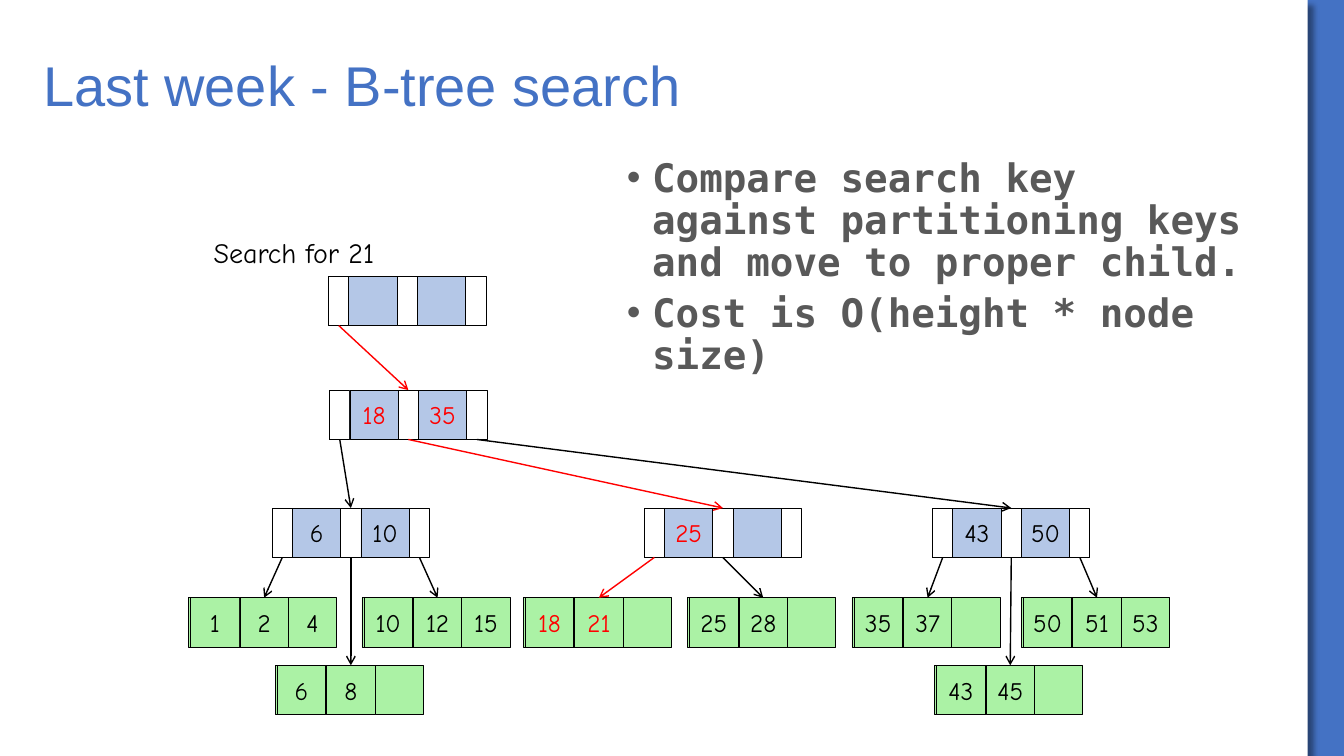
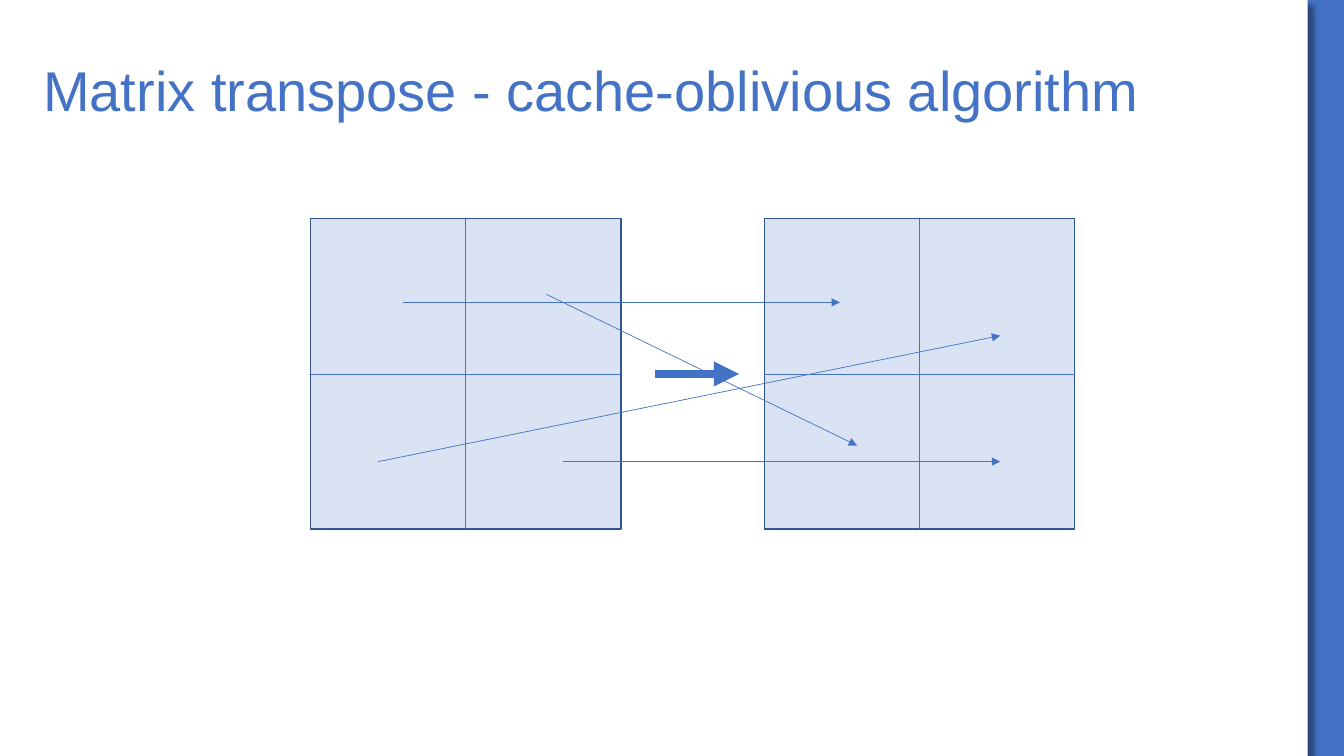
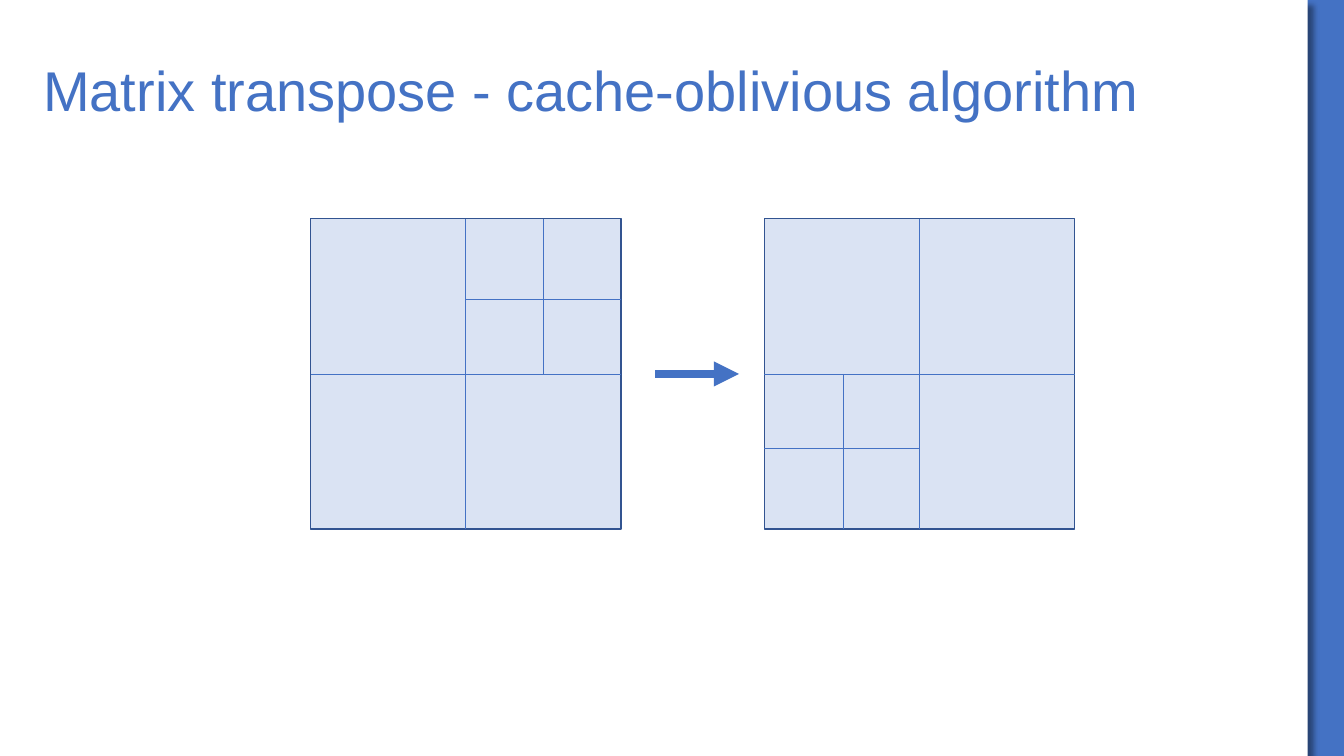
from dataclasses import dataclass

from lxml import etree
from pptx import Presentation
from pptx.dml.color import RGBColor
from pptx.enum.shapes import MSO_CONNECTOR, MSO_SHAPE
from pptx.enum.text import MSO_ANCHOR, MSO_AUTO_SIZE, PP_ALIGN
from pptx.oxml.ns import qn
from pptx.shapes.autoshape import Shape
from pptx.shapes.connector import Connector
from pptx.slide import Slide
from pptx.text.text import TextFrame, _Paragraph
from pptx.util import Pt

PX = 9144
SLIDE_WIDTH, SLIDE_HEIGHT, PANEL_WIDTH = 1333, 750, 1297
RECTANGLE = MSO_SHAPE.RECTANGLE
STRAIGHT = MSO_CONNECTOR.STRAIGHT
MIDDLE = MSO_ANCHOR.MIDDLE
CENTER = PP_ALIGN.CENTER
FIT_SHAPE = MSO_AUTO_SIZE.SHAPE_TO_FIT_TEXT
TOP, LEFT, BOTTOM, RIGHT = range(4)

COLOURS = {
    "accent": "4472C4",
    "panel": "FFFFFF",
    "body": "595959",
    "ink": "000000",
    "path": "FF0000",
    "key": "B4C7E7",
    "leaf": "ABF2A5",
    "matrix": "DAE3F3",
    "matrix_edge": "325491",
}
TITLE_FONT, BODY_FONT, TREE_FONT = "Arial", "DejaVu Sans Mono", "Comic Neue"


@dataclass(frozen=True)
class Slot:
    offset: int
    width: int
    fill: str


@dataclass(frozen=True)
class NodeKind:
    width: int
    fill: str
    slots: tuple[Slot, ...]
    key_slots: tuple[int, ...]
    pointer_slots: tuple[int, ...]
    entry_slot: int


@dataclass(frozen=True)
class Node:
    kind: NodeKind
    left: int
    top: int
    keys: tuple[str, ...] = ()
    on_path: bool = False
    children: tuple["Node", ...] = ()


@dataclass(frozen=True)
class Split:
    left: int
    top: int
    size: int
    across: int
    down: int


@dataclass(frozen=True)
class Move:
    start: tuple[int, int]
    end: tuple[int, int]


NODE_HEIGHT = 49
INNER = NodeKind(
    155, "key",
    (Slot(0, 20, "panel"), Slot(20, 48, "key"), Slot(68, 20, "panel"),
     Slot(88, 48, "key"), Slot(136, 20, "panel")),
    (1, 3), (0, 2, 4), 2,
)
LEAF = NodeKind(
    145, "leaf", tuple(Slot(offset, 48, "leaf") for offset in (2, 51, 99)),
    (0, 1, 2), (), 1,
)
INNER_TOP, LEAF_TOP, LOW_LEAF_TOP = 504, 593, 660

TREE = Node(INNER, 326, 274, on_path=True, children=(
    Node(INNER, 327, 387, ("18", "35"), True, (
        Node(INNER, 270, INNER_TOP, ("6", "10"), children=(
            Node(LEAF, 187, LEAF_TOP, ("1", "2", "4")),
            Node(LEAF, 273, LOW_LEAF_TOP, ("6", "8")),
            Node(LEAF, 359, LEAF_TOP, ("10", "12", "15")),
        )),
        Node(INNER, 639, INNER_TOP, ("25",), True, (
            Node(LEAF, 519, LEAF_TOP, ("18", "21"), True),
            Node(LEAF, 682, LEAF_TOP, ("25", "28")),
        )),
        Node(INNER, 925, INNER_TOP, ("43", "50"), children=(
            Node(LEAF, 845, LEAF_TOP, ("35", "37")),
            Node(LEAF, 927, LOW_LEAF_TOP, ("43", "45")),
            Node(LEAF, 1013, LEAF_TOP, ("50", "51", "53")),
        )),
    )),
))

MATRIX_TOP, MATRIX_SIZE = 217, 308
SOURCE_LEFT, RESULT_LEFT = 308, 758
HALF = MATRIX_SIZE // 2
SOURCE_QUARTER = Split(HALF, 0, HALF, 77, 80)
RESULT_QUARTER = Split(0, HALF, HALF, 78, 74)
QUADRANT_MOVES = (
    Move((400, 300), (833, 300)),
    Move((558, 458), (992, 458)),
    Move((375, 458), (992, 333)),
    Move((542, 292), (850, 442)),
)


def rgb(colour: str) -> RGBColor:
    return RGBColor.from_string(COLOURS[colour])


def add_run(paragraph: _Paragraph, text: str, font: str, size: int,
            colour: str, bold: bool = False) -> None:
    run = paragraph.add_run()
    run.text = text
    run.font.name = font
    run.font.size = Pt(size)
    run.font.bold = bold
    run.font.color.rgb = rgb(colour)


def add_box(shapes, left: int, top: int, width: int, height: int, fill: str,
            edge: str | None = None, edge_width: float = 0.5) -> Shape:
    box = shapes.add_shape(RECTANGLE, left * PX, top * PX, width * PX, height * PX)
    box.shadow.inherit = False
    box.fill.solid()
    box.fill.fore_color.rgb = rgb(fill)
    if edge:
        box.line.color.rgb = rgb(edge)
        box.line.width = Pt(edge_width)
    else:
        box.line.fill.background()
    return box


def add_text_frame(slide: Slide, left: int, top: int, width: int, height: int) -> TextFrame:
    frame = slide.shapes.add_textbox(left * PX, top * PX, width * PX, height * PX).text_frame
    frame.word_wrap = True
    return frame


def add_line(slide: Slide, start: tuple[int, int], end: tuple[int, int], colour: str,
             width: float, head: str | None = None) -> Connector:
    line = slide.shapes.add_connector(STRAIGHT, *(value * PX for value in start + end))
    line.line.color.rgb = rgb(colour)
    line.line.width = Pt(width)
    properties = line.element.spPr
    if head:
        etree.SubElement(properties.find(qn("a:ln")), qn("a:tailEnd"), type=head)
    etree.SubElement(properties, qn("a:effectLst"))
    return line


def join(line: Connector, origin: Shape, origin_side: int,
         target: Shape, target_side: int) -> None:
    line.begin_connect(origin, origin_side)
    line.end_connect(target, target_side)


def add_titled_slide(deck, title: str, title_top: int, title_height: int) -> Slide:
    slide = deck.slides.add_slide(deck.slide_layouts[6])
    slide.background.fill.solid()
    slide.background.fill.fore_color.rgb = rgb("accent")
    panel = add_box(slide.shapes, 0, 0, PANEL_WIDTH, SLIDE_HEIGHT, "panel")
    shadow = etree.SubElement(
        panel.element.spPr.find(qn("a:effectLst")), qn("a:outerShdw"),
        blurRad=str(Pt(4)), dist=str(Pt(6)), dir="2700000", algn="tl", rotWithShape="0")
    tint = etree.SubElement(shadow, qn("a:srgbClr"), val=COLOURS["ink"])
    etree.SubElement(tint, qn("a:alpha"), val="40000")
    frame = add_text_frame(slide, 33, title_top, 1233, title_height)
    frame.vertical_anchor = MIDDLE
    heading = frame.paragraphs[0]
    heading.line_spacing = 0.9
    add_run(heading, title, TITLE_FONT, 40, "accent")
    return slide


def add_bullets(slide: Slide, points: tuple[str, ...]) -> None:
    frame = add_text_frame(slide, 612, 152, 646, 256)
    for index, point in enumerate(points):
        paragraph = frame.add_paragraph() if index else frame.paragraphs[0]
        paragraph.line_spacing = 0.9
        paragraph.space_before = Pt(6)
        add_run(paragraph, point, BODY_FONT, 28, "body", True)
        properties = paragraph._p.get_or_add_pPr()
        properties.set("marL", str(25 * PX))
        properties.set("indent", str(-25 * PX))
        etree.SubElement(properties, qn("a:buFont"), typeface=TITLE_FONT)
        etree.SubElement(properties, qn("a:buChar"), char="•")


def add_key(slot: Shape, key: str, colour: str) -> None:
    frame = slot.text_frame
    frame.margin_left = frame.margin_right = 0
    frame.vertical_anchor = MIDDLE
    frame.paragraphs[0].alignment = CENTER
    add_run(frame.paragraphs[0], key, TREE_FONT, 18, colour)


def add_tree(slide: Slide, node: Node) -> Shape:
    kind = node.kind
    group = slide.shapes.add_group_shape()
    add_box(group.shapes, node.left, node.top, kind.width, NODE_HEIGHT, kind.fill, "ink")
    slots = [add_box(group.shapes, node.left + slot.offset, node.top, slot.width,
                     NODE_HEIGHT, slot.fill, "ink") for slot in kind.slots]
    for position, key in zip(kind.key_slots, node.keys):
        add_key(slots[position], key, "path" if node.on_path else "ink")
    for position, child in zip(kind.pointer_slots, node.children):
        entry = add_tree(slide, child)
        pointer = add_line(slide, (node.left, node.top), (child.left, child.top),
                           "path" if child.on_path else "ink", 1, "arrow")
        join(pointer, slots[position], BOTTOM, entry, TOP)
    return slots[kind.entry_slot]


def add_split(slide: Slide, matrix_left: int, split: Split) -> tuple[Connector, Connector]:
    left, top = matrix_left + split.left, MATRIX_TOP + split.top
    row, column = top + split.down, left + split.across
    return (
        add_line(slide, (left, row), (left + split.size, row), "accent", 0.5),
        add_line(slide, (column, top), (column, top + split.size), "accent", 0.5),
    )


def add_matrix(slide: Slide, left: int) -> None:
    square = add_box(slide.shapes, left, MATRIX_TOP, MATRIX_SIZE, MATRIX_SIZE,
                     "matrix", "matrix_edge", 1)
    row_line, column_line = add_split(slide, left, Split(0, 0, MATRIX_SIZE, HALF, HALF))
    join(row_line, square, LEFT, square, RIGHT)
    join(column_line, square, TOP, square, BOTTOM)


def add_transpose_slide(deck) -> Slide:
    slide = add_titled_slide(deck, "Matrix transpose - cache-oblivious algorithm", 30, 125)
    for left in (SOURCE_LEFT, RESULT_LEFT):
        add_matrix(slide, left)
    middle = MATRIX_TOP + HALF
    add_line(slide, (650, middle), (733, middle), "accent", 6, "triangle")
    return slide


def build_search_slide(deck) -> None:
    slide = add_titled_slide(deck, "Last week - B-tree search", 50, 75)
    add_bullets(slide, (
        "Compare search key against partitioning keys and move to proper child.",
        "Cost is O(height * node size)",
    ))
    caption = add_text_frame(slide, 202, 229, 202, 44)
    caption.word_wrap = False
    caption.auto_size = FIT_SHAPE
    add_run(caption.paragraphs[0], "Search for 21", TREE_FONT, 20, "ink")
    add_tree(slide, TREE)


def build_quadrant_slide(deck) -> None:
    slide = add_transpose_slide(deck)
    for move in QUADRANT_MOVES:
        add_line(slide, move.start, move.end, "accent", 0.5, "triangle")


def build_recursion_slide(deck) -> None:
    slide = add_transpose_slide(deck)
    add_split(slide, SOURCE_LEFT, SOURCE_QUARTER)
    add_split(slide, RESULT_LEFT, RESULT_QUARTER)


def main() -> None:
    deck = Presentation()
    deck.slide_width = SLIDE_WIDTH * PX
    deck.slide_height = SLIDE_HEIGHT * PX
    build_search_slide(deck)
    build_quadrant_slide(deck)
    build_recursion_slide(deck)
    deck.save("out.pptx")


if __name__ == "__main__":
    main()
